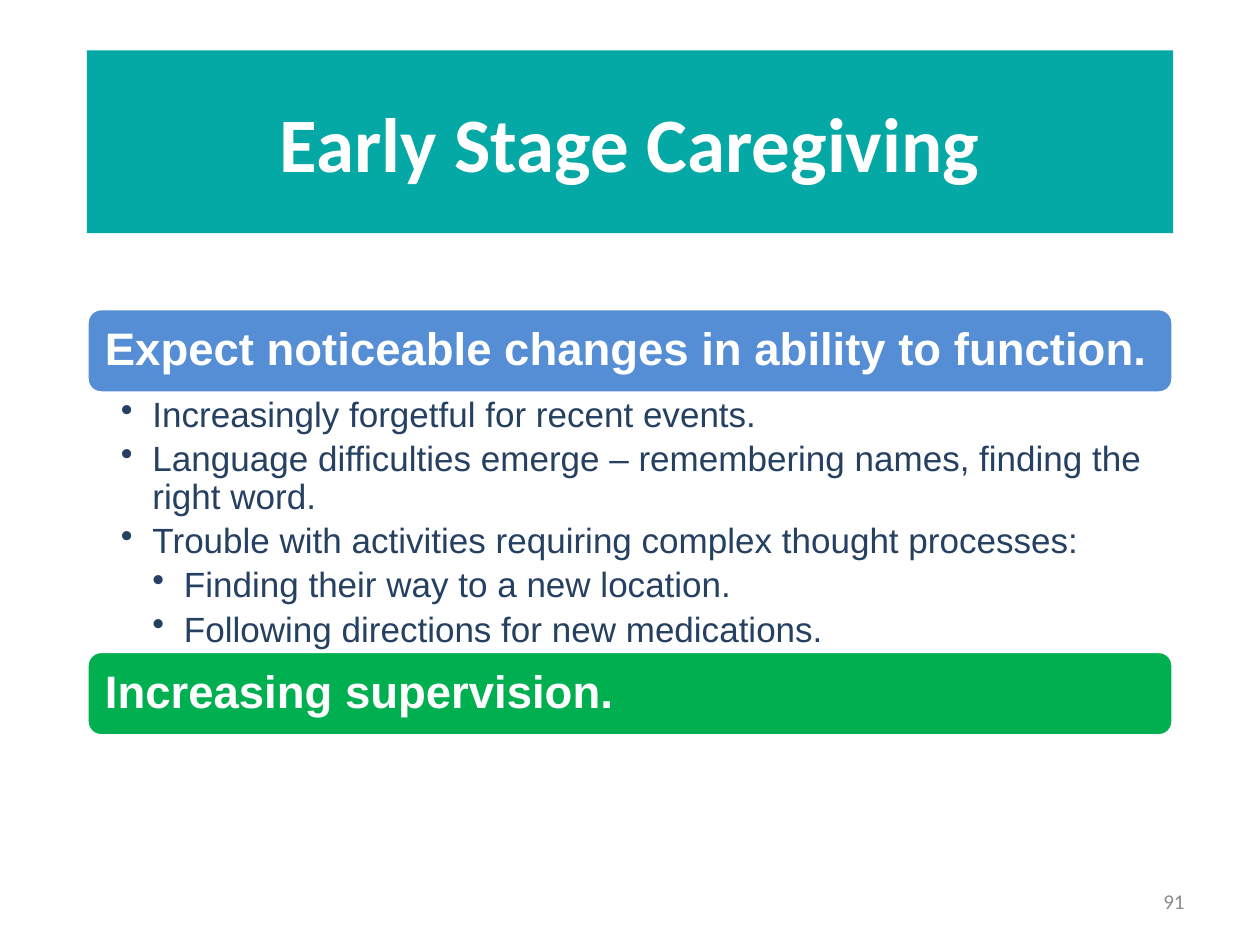
import pptx
import pptx.util
import pptx.dml.color
import pptx.enum.shapes
import pptx.enum.text
import lxml.etree

Inches, Pt = pptx.util.Inches, pptx.util.Pt
RGB = pptx.dml.color.RGBColor.from_string
SHAPE = pptx.enum.shapes.MSO_SHAPE
ALIGN = pptx.enum.text.PP_ALIGN
MIDDLE = pptx.enum.text.MSO_ANCHOR.MIDDLE

THEME = {
    "white": RGB("FFFFFF"), "teal": RGB("04A8A4"), "blue": RGB("558ED5"),
    "green": RGB("00B050"), "navy": RGB("254061"), "grey": RGB("8B8B8B"),
    "title": Pt(44), "heading": Pt(26), "body": Pt(20), "number": Pt(12),
}
LEFT, WIDTH = Inches(0.69), Inches(8.62)


def add_text(p, text, size, color, name="Arial", bold=False, **layout):
    """Write one formatted run into a paragraph."""
    r = p.add_run()
    r.text = text
    r.font.color.rgb = THEME[color]
    for key, value in {"size": THEME[size], "name": name, "bold": bold}.items():
        setattr(r.font, key, value)
    for key, value in layout.items():
        setattr(p, key, value)


def set_frame(tf, **layout):
    """Set the wrapping, anchor and margins of a text frame."""
    for key, value in {"word_wrap": True, **layout}.items():
        setattr(tf, key, value)
    return tf


prs = pptx.Presentation()
prs.slide_width, prs.slide_height = Inches(10), Inches(7.5)
s = prs.slides.add_slide(prs.slide_layouts[6])

# Title banner
sp = s.shapes.add_shape(SHAPE.RECTANGLE, LEFT, Inches(0.4), WIDTH, Inches(1.45))
sp.shadow.inherit = False
sp.fill.solid()
sp.fill.fore_color.rgb = THEME["teal"]
sp.line.fill.background()
tf = set_frame(sp.text_frame, vertical_anchor=MIDDLE)
add_text(tf.paragraphs[0], "Early Stage Caregiving", "title", "white",
         name="Calibri", bold=True, alignment=ALIGN.CENTER)

# Heading bars
bars = [
    (2.45, "blue", "Expect noticeable changes in ability to function."),
    (5.17, "green", "Increasing supervision."),
]
for top, color, text in bars:
    sp = s.shapes.add_shape(SHAPE.ROUNDED_RECTANGLE, LEFT, Inches(top), WIDTH, Inches(0.67))
    sp.shadow.inherit = False
    sp.fill.solid()
    sp.fill.fore_color.rgb = THEME[color]
    sp.line.color.rgb = THEME["white"]
    sp.line.width = Pt(2)
    margin = Inches(0.11)
    tf = set_frame(sp.text_frame, vertical_anchor=MIDDLE, margin_left=margin,
                   margin_right=margin, margin_top=margin, margin_bottom=margin)
    add_text(tf.paragraphs[0], text, "heading", "white", bold=True,
             alignment=ALIGN.LEFT, line_spacing=0.9)

# Bulleted details under the first bar
details = [
    (1, "Increasingly forgetful for recent events."),
    (1, "Language difficulties emerge – remembering names, finding the right word."),
    (1, "Trouble with activities requiring complex thought processes:"),
    (2, "Finding their way to a new location."),
    (2, "Following directions for new medications."),
]
sp = s.shapes.add_textbox(LEFT, Inches(3.11), WIDTH, Inches(2.06))
tf = set_frame(sp.text_frame, margin_left=Inches(0.27), margin_right=Inches(0.2),
               margin_top=Inches(0.04), margin_bottom=Inches(0.04))
for i, (level, text) in enumerate(details):
    p = tf.add_paragraph() if i else tf.paragraphs[0]
    pPr = p._p.get_or_add_pPr()
    pPr.set("marL", str(Inches(0.25) * level))
    pPr.set("indent", str(-Inches(0.25)))
    bullet = lxml.etree.SubElement(pPr, pptx.oxml.ns.qn("a:buChar"))
    bullet.set("char", "•")
    add_text(p, text, "body", "navy", level=level, line_spacing=0.9, space_after=Pt(3.7))

# Slide number
sp = s.shapes.add_textbox(Inches(7.17), Inches(6.95), Inches(2.33), Inches(0.4))
tf = set_frame(sp.text_frame, vertical_anchor=MIDDLE)
add_text(tf.paragraphs[0], "91", "number", "grey", name="Calibri", alignment=ALIGN.RIGHT)

prs.save("out.pptx")
